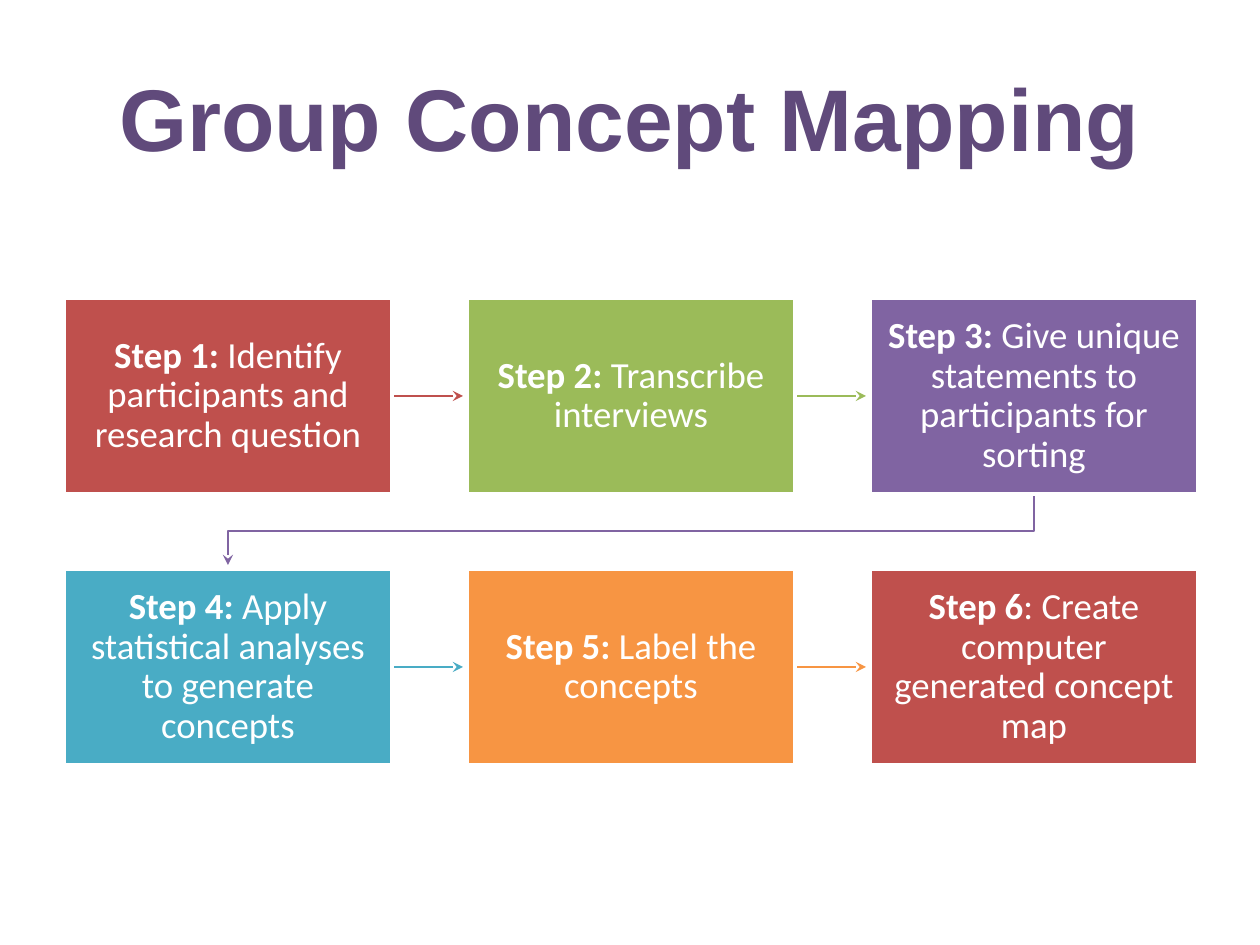
from dataclasses import dataclass

from lxml import etree
from pptx import Presentation
from pptx.dml.color import RGBColor
from pptx.enum.shapes import MSO_CONNECTOR, MSO_SHAPE
from pptx.enum.text import MSO_ANCHOR, PP_ALIGN
from pptx.oxml.ns import qn
from pptx.util import Emu, Pt

STRAIGHT = MSO_CONNECTOR.STRAIGHT
RECTANGLE = MSO_SHAPE.RECTANGLE
MIDDLE = MSO_ANCHOR.MIDDLE
CENTER = PP_ALIGN.CENTER


@dataclass(frozen=True)
class Theme:
    heading: str = "604A7B"
    red: str = "BF504D"
    green: str = "9BBB59"
    purple: str = "8064A2"
    teal: str = "49ACC5"
    orange: str = "F79543"
    white: str = "FFFFFF"
    heading_font: str = "Arial"
    step_font: str = "Calibri"
    heading_size: int = 50
    step_size: int = 21
    border: float = 2
    arrow: float = 0.75


theme = Theme()


def px(value):
    return Emu(round(value * 914400 / 126))


def style_arrow(arrow, color):
    arrow.line.color.rgb = RGBColor.from_string(color)
    arrow.line.width = Pt(theme.arrow)
    tip = etree.SubElement(arrow.line._get_or_add_ln(), qn("a:tailEnd"))
    tip.set("type", "stealth")


prs = Presentation()
prs.slide_width = px(1260)
prs.slide_height = px(945)
slide = prs.slides.add_slide(prs.slide_layouts[5])

heading = slide.shapes.title
heading.left, heading.top, heading.width, heading.height = px(63), px(38), px(1134), px(157)
heading.text_frame.text = "Group Concept Mapping"
heading.text_frame.vertical_anchor = MIDDLE
heading_line = heading.text_frame.paragraphs[0]
heading_line.alignment = CENTER
heading_font = heading_line.runs[0].font
heading_font.name = theme.heading_font
heading_font.size = Pt(theme.heading_size)
heading_font.bold = True
heading_font.color.rgb = RGBColor.from_string(theme.heading)

steps = [
    ("Step 1: ", "Identify participants and research question", theme.red),
    ("Step 2: ", "Transcribe interviews", theme.green),
    ("Step 3:", " Give unique statements to participants for sorting", theme.purple),
    ("Step 4: ", "Apply statistical analyses to generate concepts", theme.teal),
    ("Step 5:", " Label the concepts", theme.orange),
    ("Step 6", ": Create computer generated concept map", theme.red),
]
columns = 3
left, top = 64, 298
width, height = 328, 196
column_pitch, row_pitch = 403, 271
padding = px(16)
tip_gap = 4

boxes = []
for index, (label, action, color) in enumerate(steps):
    row, column = divmod(index, columns)
    x, y = left + column * column_pitch, top + row * row_pitch
    box = slide.shapes.add_shape(RECTANGLE, px(x), px(y), px(width), px(height))
    box.shadow.inherit = False
    box.fill.solid()
    box.fill.fore_color.rgb = RGBColor.from_string(color)
    box.line.color.rgb = RGBColor.from_string(theme.white)
    box.line.width = Pt(theme.border)
    frame = box.text_frame
    frame.word_wrap = True
    frame.vertical_anchor = MIDDLE
    frame.margin_left = frame.margin_right = padding
    frame.margin_top = frame.margin_bottom = padding
    sentence = frame.paragraphs[0]
    sentence.alignment = CENTER
    sentence.line_spacing = 0.9
    for words, bold in ((label, True), (action, False)):
        run = sentence.add_run()
        run.text = words
        run.font.name = theme.step_font
        run.font.size = Pt(theme.step_size)
        run.font.bold = bold
        run.font.color.rgb = RGBColor.from_string(theme.white)
    boxes.append(box)

    if column < columns - 1:
        middle = px(y + height // 2)
        next_step = slide.shapes.add_connector(
            STRAIGHT, px(x + width), middle, px(x + column_pitch - tip_gap), middle
        )
        next_step.begin_connect(box, 3)
        style_arrow(next_step, color)
        etree.SubElement(next_step._element.spPr, qn("a:effectLst"))
        box._element.addprevious(next_step._element)

row_start = left + width // 2
row_end = row_start + (columns - 1) * column_pitch
row_bottom = top + height
turn = (row_bottom + top + row_pitch) // 2
outline = slide.shapes.build_freeform(px(row_end), px(row_bottom), scale=1.0)
outline.add_line_segments(
    [
        (px(row_end), px(turn)),
        (px(row_start), px(turn)),
        (px(row_start), px(top + row_pitch - tip_gap)),
    ],
    close=False,
)
next_row = outline.convert_to_shape()
next_row.fill.background()
next_row.shadow.inherit = False
style_arrow(next_row, theme.purple)
boxes[columns - 1]._element.addprevious(next_row._element)

prs.save("out.pptx")
